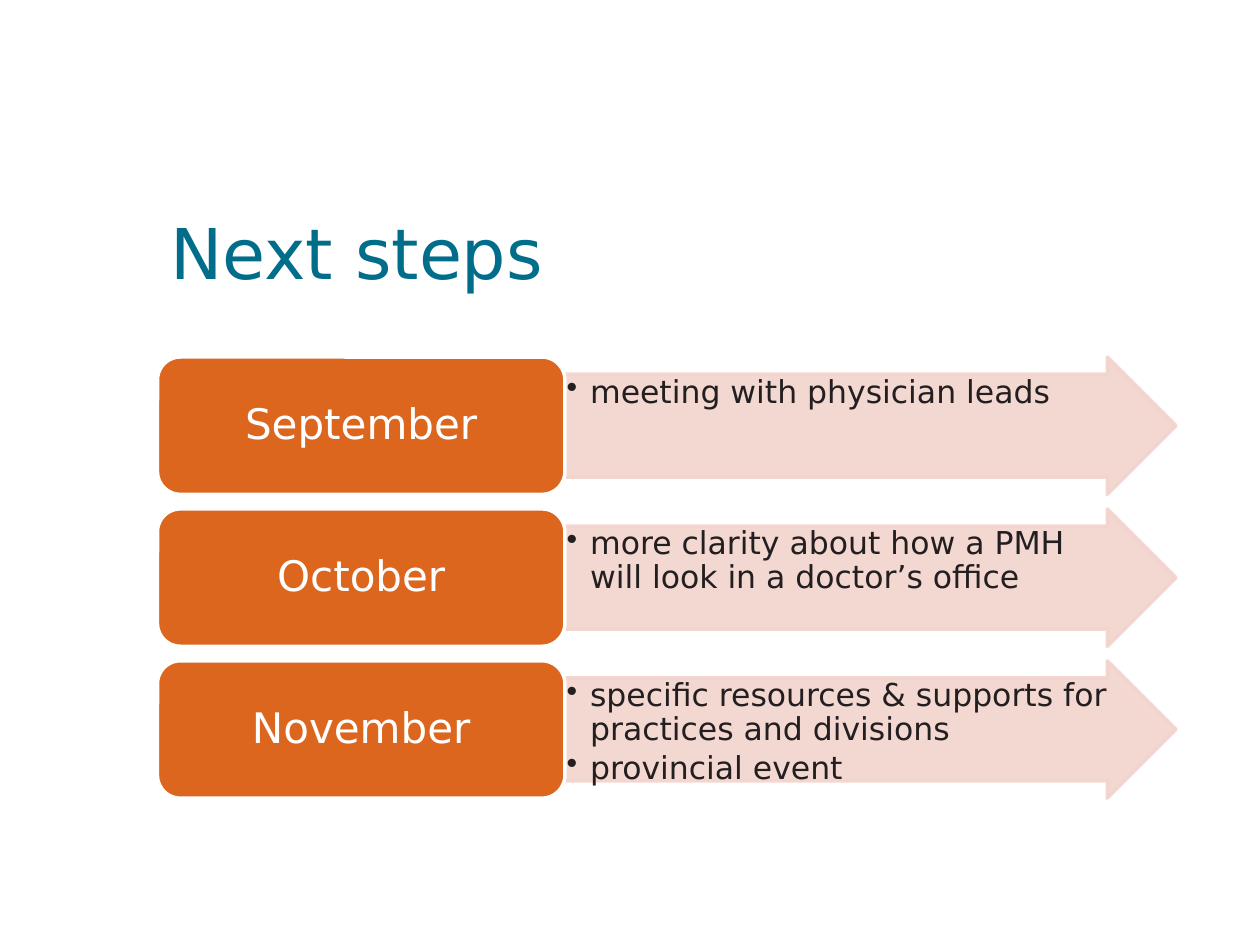
from dataclasses import dataclass

from lxml import etree
from pptx import Presentation
from pptx.dml.color import RGBColor
from pptx.enum import shapes, text
from pptx.oxml import ns
from pptx.util import Pt

TEAL = RGBColor(0x00, 0x6D, 0x8A)
ORANGE = RGBColor(0xDC, 0x66, 0x1E)
PINK = RGBColor(0xF2, 0xD3, 0xCD)
INK = RGBColor(0x23, 0x1F, 0x20)
WHITE = RGBColor(0xFF, 0xFF, 0xFF)

FONT = "DejaVu Sans"
LEFT = 90
FIRST_TOP = 204
ROW_HEIGHT = 78.5
ROW_PITCH = 86.8
MONTH_WIDTH = 232.8
ARROW_WIDTH = 349.2
BULLET_INDENT = 13.5


@dataclass
class Step:
    month: str
    actions: list[str]


STEPS = [
    Step("September", ["meeting with physician leads"]),
    Step("October", ["more clarity about how a PMH will look in a doctor’s office"]),
    Step("November", ["specific resources & supports for practices and divisions",
                      "provincial event"]),
]


def add_bullet(para) -> None:
    properties = para._p.get_or_add_pPr()
    properties.set("marL", str(Pt(BULLET_INDENT)))
    properties.set("indent", str(-Pt(BULLET_INDENT)))
    etree.SubElement(properties, ns.qn("a:buChar")).set("char", "•")


def write(frame, lines: list[str], *, size: float, color: RGBColor,
          align=text.PP_ALIGN.LEFT, anchor=text.MSO_ANCHOR.MIDDLE,
          spacing: float = 1.0, after: float = 0, bullets: bool = False) -> None:
    frame.word_wrap = True
    frame.auto_size = text.MSO_AUTO_SIZE.NONE
    frame.vertical_anchor = anchor
    for index, line in enumerate(lines):
        para = frame.paragraphs[0] if index == 0 else frame.add_paragraph()
        if bullets:
            add_bullet(para)
        para.alignment = align
        para.line_spacing = spacing
        para.space_before = Pt(0)
        para.space_after = Pt(after)
        span = para.add_run()
        span.text = line
        span.font.name = FONT
        span.font.size = Pt(size)
        span.font.color.rgb = color


def place(shape, left: float, top: float, width: float, height: float) -> None:
    shape.left, shape.top = Pt(left), Pt(top)
    shape.width, shape.height = Pt(width), Pt(height)


def add_box(page, kind, left: float, top: float, width: float,
            fill: RGBColor, line: RGBColor):
    box = page.shapes.add_shape(kind, Pt(left), Pt(top), Pt(width), Pt(ROW_HEIGHT))
    box.shadow.inherit = False
    box.fill.solid()
    box.fill.fore_color.rgb = fill
    box.line.color.rgb = line
    box.line.width = Pt(2)
    return box


def set_opacity(box, percent: int) -> None:
    """Apply the opacity to both fill and outline."""
    for color in box._element.spPr.iter(ns.qn("a:srgbClr")):
        etree.SubElement(color, ns.qn("a:alpha")).set("val", str(percent * 1000))


def add_step(page, step: Step, top: float) -> None:
    arrow = add_box(page, shapes.MSO_SHAPE.RIGHT_ARROW, LEFT + MONTH_WIDTH, top,
                    ARROW_WIDTH, PINK, PINK)
    arrow.adjustments[0] = 0.75
    arrow.adjustments[1] = 0.5
    set_opacity(arrow, 90)
    frame = arrow.text_frame
    frame.margin_left = frame.margin_right = Pt(0.9)
    frame.margin_top = frame.margin_bottom = Pt(0.9)
    write(frame, step.actions, size=18, color=INK, anchor=text.MSO_ANCHOR.TOP,
          spacing=0.9, after=2.7, bullets=True)

    month = add_box(page, shapes.MSO_SHAPE.ROUNDED_RECTANGLE, LEFT, top,
                    MONTH_WIDTH, ORANGE, WHITE)
    write(month.text_frame, [step.month], size=24, color=WHITE,
          align=text.PP_ALIGN.CENTER, spacing=0.9)


def main() -> None:
    deck = Presentation()
    deck.slide_width, deck.slide_height = Pt(720), Pt(540)
    page = deck.slides.add_slide(deck.slide_layouts.get_by_name("Title Only"))

    title = page.shapes.title
    place(title, LEFT, 102, 618, 84)
    write(title.text_frame, ["Next steps"], size=40, color=TEAL)

    for row, step in enumerate(STEPS):
        add_step(page, step, FIRST_TOP + row * ROW_PITCH)

    deck.save("out.pptx")


if __name__ == "__main__":
    main()
